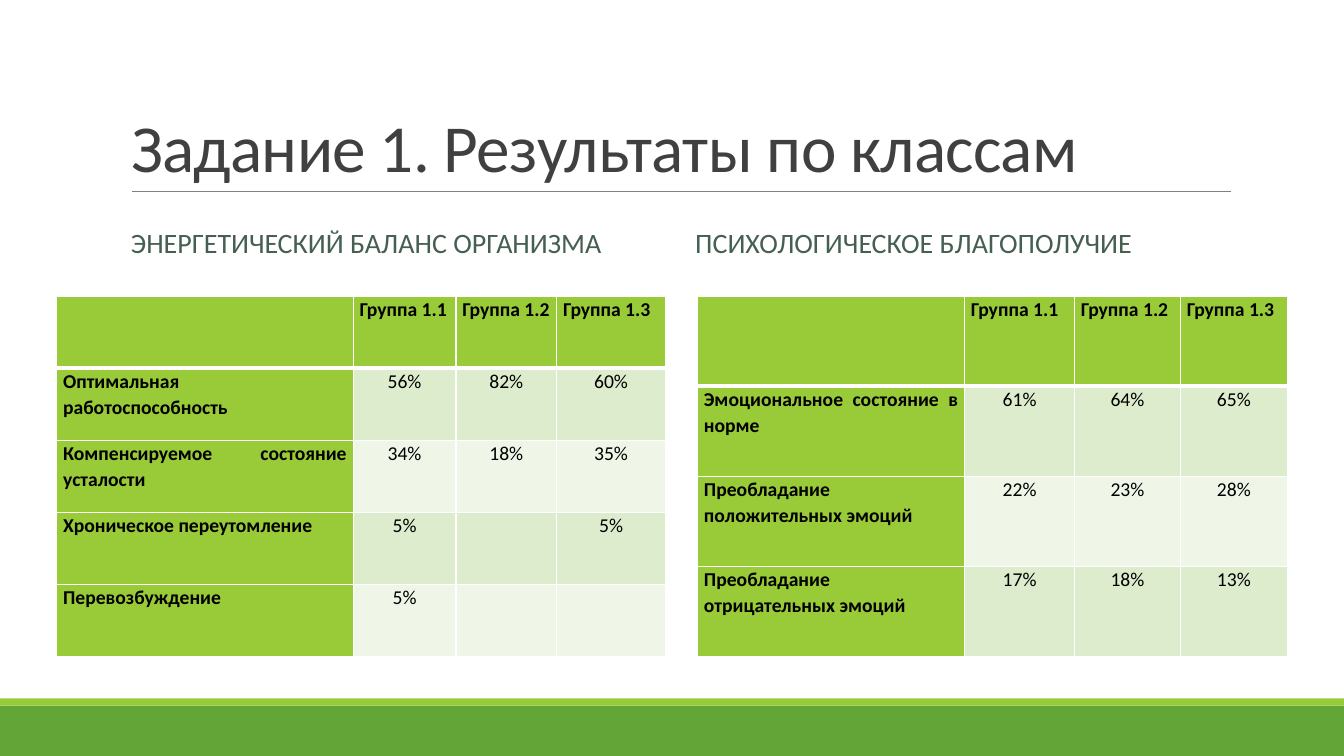
from dataclasses import dataclass

import pptx
import pptx.dml.color
import pptx.enum.shapes
import pptx.enum.text
import pptx.oxml
import pptx.oxml.ns
import pptx.util
from pptx.util import Cm

ALIGN = pptx.enum.text.PP_ALIGN
ANCHOR = pptx.enum.text.MSO_ANCHOR


@dataclass(frozen=True)
class Theme:
    font: str = "Calibri"
    title_size: int = 48
    heading_size: int = 20
    table_size: int = 14
    title: str = "404040"
    heading: str = "455F51"
    table_text: str = "000000"
    rule: str = "808080"
    footer: str = "63A537"
    accent: str = "99CB38"
    bands: tuple = ("DEECCE", "EFF6E8")
    border: str = "FFFFFF"


THEME = Theme()
GROUPS = ["", "Группа 1.1", "Группа 1.2", "Группа 1.3"]
ENERGY = [
    GROUPS,
    ["Оптимальная работоспособность", "56%", "82%", "60%"],
    ["Компенсируемое состояние усталости", "34%", "18%", "35%"],
    ["Хроническое переутомление", "5%", "", "5%"],
    ["Перевозбуждение", "5%", "", ""],
]
WELLBEING = [
    GROUPS,
    ["Эмоциональное состояние в норме", "61%", "64%", "65%"],
    ["Преобладание положительных эмоций", "22%", "23%", "28%"],
    ["Преобладание отрицательных эмоций", "17%", "18%", "13%"],
]


def rgb(color):
    return pptx.dml.color.RGBColor.from_string(color)


def format_paragraph(paragraph, size, color, align, spacing, bold=False):
    paragraph.alignment = align
    paragraph.line_spacing = spacing
    font = paragraph.font
    font.name = THEME.font
    font.size = pptx.util.Pt(size)
    font.bold = bold
    font.color.rgb = rgb(color)


def set_title(slide, text):
    title = slide.shapes.title
    title.left, title.top, title.width, title.height = Cm(3.05), Cm(0.79), Cm(27.94), Cm(4.04)
    frame = title.text_frame
    frame.text = text
    frame.word_wrap = True
    frame.auto_size = pptx.enum.text.MSO_AUTO_SIZE.NONE
    frame.vertical_anchor = ANCHOR.BOTTOM
    paragraph = frame.paragraphs[0]
    format_paragraph(paragraph, THEME.title_size, THEME.title, ALIGN.LEFT, 0.85)
    paragraph._p.get_or_add_pPr().get_or_add_defRPr().set("spc", "-50")


def add_band(slide, top, height, color):
    band = slide.shapes.add_shape(
        pptx.enum.shapes.MSO_SHAPE.RECTANGLE, 0, Cm(top), Cm(33.87), Cm(height))
    band.shadow.inherit = False
    band.fill.solid()
    band.fill.fore_color.rgb = rgb(color)
    band.line.fill.background()


def add_title_rule(slide):
    rule = slide.shapes.add_connector(
        pptx.enum.shapes.MSO_CONNECTOR.STRAIGHT, Cm(3.33), Cm(4.83), Cm(31.01), Cm(4.83))
    rule.line.color.rgb = rgb(THEME.rule)
    rule.line.width = pptx.util.Pt(0.5)
    rule._element.spPr.append(pptx.oxml.parse_xml(
        f"<a:effectLst {pptx.oxml.ns.nsdecls('a')}/>"))


def add_heading(slide, left, text):
    heading = slide.shapes.add_textbox(Cm(left), Cm(5.13), Cm(13.72), Cm(2.06))
    frame = heading.text_frame
    frame.word_wrap = True
    frame.vertical_anchor = ANCHOR.MIDDLE
    frame.text = text
    paragraph = frame.paragraphs[0]
    format_paragraph(paragraph, THEME.heading_size, THEME.heading, ALIGN.LEFT, 0.9)
    paragraph.space_before = pptx.util.Pt(12)
    paragraph.space_after = pptx.util.Pt(2)


def set_borders(cell, is_header):
    widths = {"L": 1, "R": 1, "B": 3 if is_header else 1}
    if is_header:
        widths = {"L": 1, "R": 1, "T": 1, "B": 3}
    properties = cell._tc.get_or_add_tcPr()
    for side, width in widths.items():
        properties.append(pptx.oxml.parse_xml(
            f'<a:ln{side} {pptx.oxml.ns.nsdecls("a")} w="{pptx.util.Pt(width)}">'
            f'<a:solidFill><a:srgbClr val="{THEME.border}"/></a:solidFill></a:ln{side}>'))


def fill_cell(cell, text, row, column):
    is_label = row == 0 or column == 0
    set_borders(cell, row == 0)
    cell.fill.solid()
    cell.fill.fore_color.rgb = rgb(THEME.accent if is_label else THEME.bands[(row - 1) % 2])
    cell.margin_left = cell.margin_right = Cm(0.16)
    cell.margin_top = cell.margin_bottom = 0
    cell.text = text
    format_paragraph(
        cell.text_frame.paragraphs[0], THEME.table_size, THEME.table_text,
        ALIGN.JUSTIFY if is_label else ALIGN.CENTER, 1.07, is_label)


def add_results(slide, left, widths, results):
    height = 9.09
    table = slide.shapes.add_table(
        len(results), len(widths), Cm(left), Cm(7.46), Cm(sum(widths)), Cm(height)).table
    table.first_row = table.horz_banding = False
    for column, width in zip(table.columns, widths):
        column.width = Cm(width)
    for row in table.rows:
        row.height = Cm(height / len(results))
    for row, texts in enumerate(results):
        for column, text in enumerate(texts):
            fill_cell(table.cell(row, column), text, row, column)


def main():
    presentation = pptx.Presentation()
    presentation.slide_width, presentation.slide_height = Cm(33.87), Cm(19.05)
    slide = presentation.slides.add_slide(presentation.slide_layouts[5])
    add_band(slide, 17.78, 1.27, THEME.footer)
    add_band(slide, 17.6, 0.18, THEME.accent)
    add_title_rule(slide)
    set_title(slide, "Задание 1. Результаты по классам")
    add_heading(slide, 3.05, "ЭНЕРГЕТИЧЕСКИЙ БАЛАНС ОРГАНИЗМА")
    add_results(slide, 1.43, [7.47, 2.59, 2.54, 2.74], ENERGY)
    add_heading(slide, 17.27, "ПСИХОЛОГИЧЕСКОЕ БЛАГОПОЛУЧИЕ")
    add_results(slide, 17.58, [6.73, 2.77, 2.67, 2.69], WELLBEING)
    presentation.save("out.pptx")


if __name__ == "__main__":
    main()
